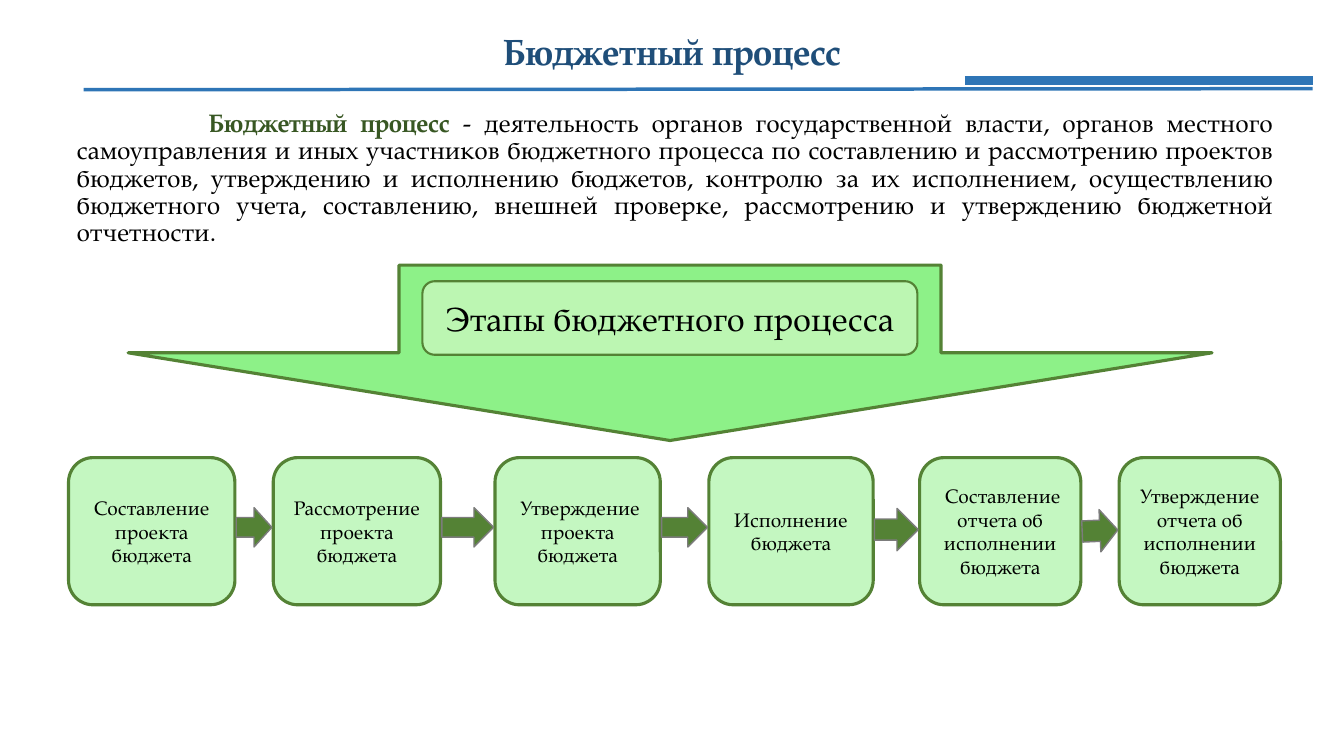
from pptx import Presentation, util as u
from pptx.dml.color import RGBColor
from pptx.enum import shapes, text
from pptx.oxml.ns import qn
from lxml import etree

# Content
TITLE = "Бюджетный процесс"
DEFINITION = [
    ("Бюджетный процесс ", "term", True),
    ("- деятельность органов государственной власти, органов местного "
     "самоуправления и иных участников бюджетного процесса по составлению и "
     "рассмотрению проектов бюджетов, утверждению и исполнению бюджетов, "
     "контролю за их исполнением, осуществлению бюджетного учета, "
     "составлению, внешней проверке, рассмотрению и утверждению бюджетной "
     "отчетности.", "text", False),
]
BADGE = "Этапы бюджетного процесса"
# Stage text, left and width in percent of the slide width
STAGES = [
    ("Составление проекта бюджета", 5.1, 12.38),
    ("Рассмотрение проекта бюджета", 20.33, 12.45),
    (" Утверждение проекта бюджета", 36.83, 12.3),
    ("Исполнение бюджета", 52.74, 12.23),
    (" Составление отчета об исполнении бюджета", 68.42, 12),
    ("Утверждение отчета об исполнении бюджета", 83.27, 12),
]
# Middle and thickness in percent of the slide height, rotation
STEP_ARROWS = [(69.75, 5.2, 270)] * 3 + [(70.05, 5.6, 270), (70.2, 5.6, 267.5)]
# Start x, start y, end x, end y in percent, width in points
RULES = [(71.79, 10.67, 97.67, 10.67, 6), (6.23, 11.87, 97.67, 11.73, 2.5)]

# Style
FONT = "TeX Gyre Pagella"
COLORS = {
    "title": "1F4E79", "term": "385723", "text": "000000", "rule": "2E75B6",
    "green": "7DEF77", "cream": "F7FEE6", "edge": "548235", "gray": "7C7C7C",
}
STAGE_TOP, STAGE_HEIGHT = 60.53, 19.47
ARROW_CLEARANCE = 0.2

presentation = Presentation()
presentation.slide_width = u.Inches(13.33)
presentation.slide_height = u.Inches(7.5)
slide = presentation.slides.add_slide(presentation.slide_layouts[1])


def x(share):
    return round(presentation.slide_width * share / 100)


def y(share):
    return round(presentation.slide_height * share / 100)


def color(name):
    return RGBColor.from_string(COLORS[name])


def place(shape, left, top, width, height):
    shape.left, shape.top = x(left), y(top)
    shape.width, shape.height = x(width), y(height)


def add_run(paragraph, words, size, color_name="text", bold=False):
    run = paragraph.add_run()
    run.text = words
    run.font.name, run.font.size, run.font.bold = FONT, u.Pt(size), bold
    run.font.color.rgb = color(color_name)


def add_figure(kind, box, fill, opacity=100, edge="edge", weight=2.25):
    shape = slide.shapes.add_shape(kind, *box)
    shape.shadow.inherit = False
    shape.fill.solid()
    shape.fill.fore_color.rgb = color(fill)
    if opacity < 100:
        tint = shape.fill._xPr.find(qn("a:solidFill"))[0]
        etree.SubElement(tint, qn("a:alpha")).set("val", str(opacity * 1000))
    shape.line.color.rgb = color(edge)
    shape.line.width = u.Pt(weight)
    return shape


def add_label(shape, words, size):
    frame = shape.text_frame
    frame.word_wrap = True
    frame.vertical_anchor = text.MSO_ANCHOR.MIDDLE
    paragraph = frame.paragraphs[0]
    paragraph.alignment = text.PP_ALIGN.CENTER
    add_run(paragraph, words, size)


# Large arrow behind the text
add_figure(shapes.MSO_SHAPE.DOWN_ARROW,
           (x(9.53), y(35.07), x(80.65), y(23.2)), "green", 87)

# Title
title = slide.shapes.title
place(title, 5.03, 0.93, 90.02, 12.4)
title.text_frame.auto_size = text.MSO_AUTO_SIZE.NONE
title.text_frame.vertical_anchor = text.MSO_ANCHOR.MIDDLE
heading = title.text_frame.paragraphs[0]
heading.alignment = text.PP_ALIGN.CENTER
heading.line_spacing = 0.9
add_run(heading, TITLE, 26, "title", True)

# Definition with a first-line indent and no bullet
body = slide.placeholders[1]
place(body, 4.95, 14, 90.55, 80.4)
body.text_frame.auto_size = text.MSO_AUTO_SIZE.NONE
definition = body.text_frame.paragraphs[0]
definition.alignment = text.PP_ALIGN.JUSTIFY
definition.line_spacing = 0.9
definition.space_before = u.Pt(10)
properties = definition._p.get_or_add_pPr()
properties.set("marL", "0")
properties.set("indent", str(u.Inches(1.31)))
etree.SubElement(properties, qn("a:buNone"))
for words, color_name, bold in DEFINITION:
    add_run(definition, words, 18, color_name, bold)

# Badge on the large arrow
badge = add_figure(shapes.MSO_SHAPE.ROUNDED_RECTANGLE,
                   (x(31.43), y(37.2), x(36.83), y(9.73)), "cream", 45,
                   weight=1.5)
add_label(badge, BADGE, 24)

# Stages
for words, left, width in STAGES:
    stage = add_figure(shapes.MSO_SHAPE.ROUNDED_RECTANGLE,
                       (x(left), y(STAGE_TOP), x(width), y(STAGE_HEIGHT)),
                       "green", 45)
    add_label(stage, words, 14)

# Arrows centred in the gaps between stages
for before, after, (middle, thickness, rotation) in zip(
        STAGES, STAGES[1:], STEP_ARROWS):
    gap_start, gap_end = before[1] + before[2], after[1]
    length = x(gap_end - gap_start - ARROW_CLEARANCE)
    breadth = y(thickness)
    left = x((gap_start + gap_end) / 2) - breadth // 2
    arrow = add_figure(shapes.MSO_SHAPE.DOWN_ARROW,
                       (left, y(middle) - length // 2, breadth, length),
                       "edge", edge="gray", weight=1)
    arrow.rotation = rotation

# Rules under the title
for start_x, start_y, end_x, end_y, weight in RULES:
    rule = slide.shapes.add_connector(
        shapes.MSO_CONNECTOR.STRAIGHT,
        x(start_x), y(start_y), x(end_x), y(end_y))
    rule.line.color.rgb = color("rule")
    rule.line.width = u.Pt(weight)
    etree.SubElement(rule._element.spPr, qn("a:effectLst"))

presentation.save("out.pptx")
